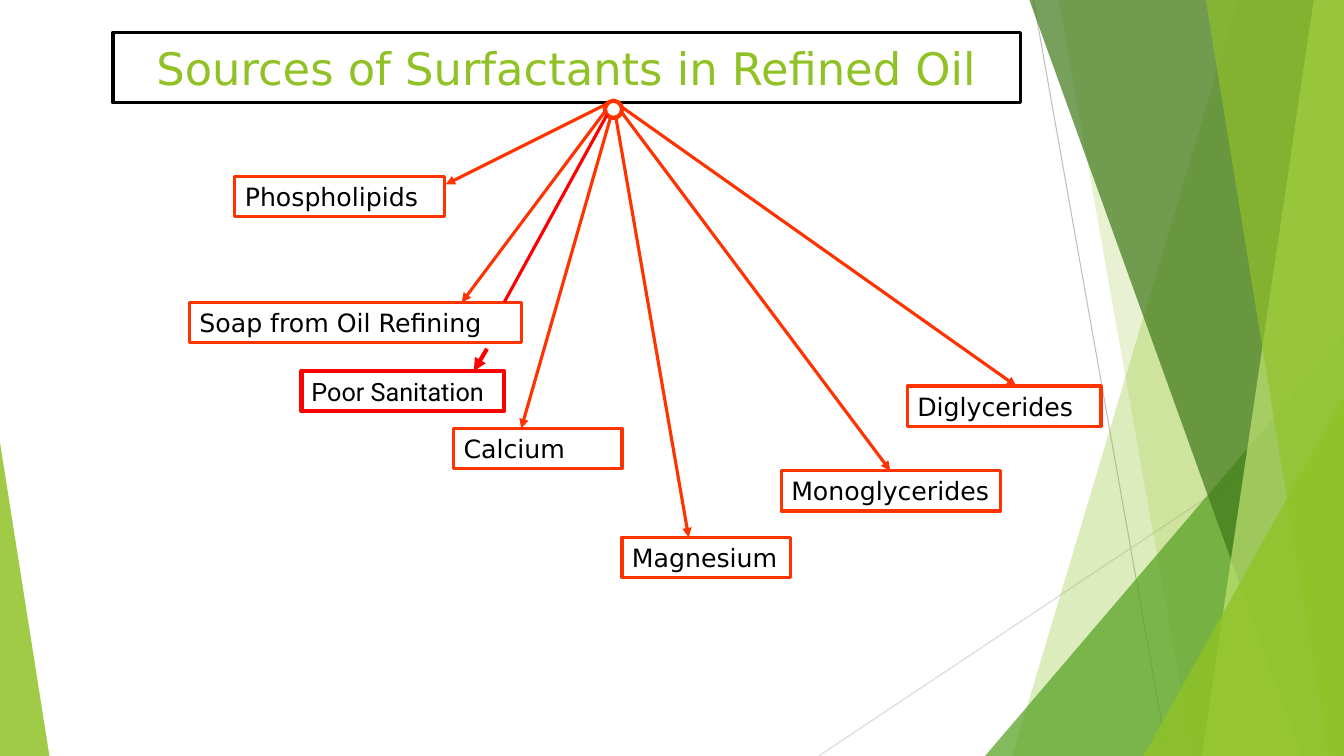
from dataclasses import dataclass

import pptx
import pptx.dml.color
import pptx.enum.dml
import pptx.enum.shapes
import pptx.enum.text
import pptx.oxml.ns
import pptx.util
from lxml import etree
from pptx.util import Inches

COLORS = {
    "black": "000000", "white": "FFFFFF", "orange": "FF3300", "red": "FF0000",
    "green": "90C226", "leaf": "54A021", "forest": "3F7819", "lime": "C0E474",
    "gray": "BFBFBF", "silver": "D9D9D9",
}
WIDTH, HEIGHT = 13.33, 7.5
BOX_HEIGHT = 0.4
Point = tuple[float, float]


@dataclass
class Facet:
    corners: list[Point]
    color: str
    opacity: int


@dataclass
class Source:
    label: str
    left: float
    top: float
    width: float
    color: str = "orange"
    font: str = "DejaVu Sans"
    line_width: float = 2.25


@dataclass
class Ray:
    start: Point
    end: Point
    color: str = "orange"
    width: float = 2.25
    arrow: bool = True


def right_band(top_x: float, bottom_x: float) -> list[Point]:
    """Corners of a full-height band reaching the right edge of the slide."""
    return [(top_x, 0), (WIDTH, 0), (WIDTH, HEIGHT), (bottom_x, HEIGHT)]


def bottom_wedge(edge_x: float, top: float, tip_x: float) -> list[Point]:
    """Corners of a right triangle standing on the bottom of the slide."""
    return [(edge_x, top), (edge_x, HEIGHT), (tip_x, HEIGHT)]


GUIDE_LINES = [
    Ray((10.25, 0), (11.58, HEIGHT), "gray", 0.75, False),
    Ray((WIDTH, 4.03), (8.12, HEIGHT), "silver", 0.75, False),
]
FACETS = [
    Facet(right_band(12.28, 10.04), "green", 30),
    Facet(right_band(10.5, 11.83), "green", 20),
    Facet(bottom_wedge(WIDTH, 3.33, 9.77), "leaf", 72),
    Facet(right_band(10.21, 12.91), "forest", 70),
    Facet(right_band(13.03, 11.92), "lime", 70),
    Facet(right_band(11.96, 13.18), "green", 65),
    Facet(bottom_wedge(WIDTH, 3.93, 11.34), "green", 80),
    Facet(bottom_wedge(0, 4.39, 0.49), "green", 85),
]
SOURCES = [
    Source("Phospholipids", 2.33, 1.75, 2.08),
    Source("Soap from Oil Refining", 1.88, 3, 3.29),
    Source("Calcium", 4.5, 4.25, 1.67),
    Source("Magnesium", 6.17, 5.33, 1.67),
    Source("Monoglycerides", 7.75, 4.67, 2.17),
    Source("Diglycerides", 9, 3.83, 1.92),
]
SANITATION = Source("Poor Sanitation", 2.99, 3.68, 2.01, "red", "Roboto", 3)
HUB = (6.08, 1)
RAYS = [
    Ray(HUB, (4.42, 1.83)),
    Ray(HUB, (4.58, 3)),
    Ray((6.08, 1.08), (5.17, 4.25)),
    Ray(HUB, (6.83, 5.33)),
    Ray(HUB, (8.83, 4.67)),
    Ray(HUB, (10.08, 3.83)),
]
SANITATION_RAYS = [
    Ray((6.02, 1.14), (5, 3), "red", arrow=False),
    Ray((4.83, 3.46), (4.7, 3.68), "red", 3),
]


def rgb(color: str) -> pptx.dml.color.RGBColor:
    return pptx.dml.color.RGBColor.from_string(COLORS[color])


def set_line(line, color: str, width: float) -> None:
    line.color.rgb = rgb(color)
    line.width = pptx.util.Pt(width)


def format_text(frame, size: float, font: str, color: str, alignment) -> None:
    paragraph = frame.paragraphs[0]
    paragraph.alignment = alignment
    for run in paragraph.runs:
        run.font.size = pptx.util.Pt(size)
        run.font.name = font
        run.font.color.rgb = rgb(color)


def draw_facet(slide, facet: Facet) -> None:
    points = [(Inches(x), Inches(y)) for x, y in facet.corners]
    builder = slide.shapes.build_freeform(*points[0])
    builder.add_line_segments(points[1:], close=True)
    shape = builder.convert_to_shape()
    shape.shadow.inherit = False
    shape.line.fill.background()
    shape.fill.solid()
    shape.fill.fore_color.rgb = rgb(facet.color)
    solid = shape.fill._xPr.find(pptx.oxml.ns.qn("a:solidFill"))
    etree.SubElement(solid[0], pptx.oxml.ns.qn("a:alpha"), val=str(facet.opacity * 1000))


def draw_ray(slide, ray: Ray) -> None:
    connector = slide.shapes.add_connector(
        pptx.enum.shapes.MSO_CONNECTOR.STRAIGHT,
        *(Inches(value) for value in ray.start + ray.end))
    set_line(connector.line, ray.color, ray.width)
    if ray.arrow:
        etree.SubElement(connector.line._get_or_add_ln(),
                         pptx.oxml.ns.qn("a:tailEnd"), type="triangle")
    etree.SubElement(connector._element.spPr, pptx.oxml.ns.qn("a:effectLst"))


def draw_source(slide, source: Source) -> None:
    box = slide.shapes.add_shape(
        pptx.enum.shapes.MSO_SHAPE.RECTANGLE, Inches(source.left),
        Inches(source.top), Inches(source.width), Inches(BOX_HEIGHT))
    box.shadow.inherit = False
    box.fill.background()
    set_line(box.line, source.color, source.line_width)
    frame = box.text_frame
    frame.text = source.label
    frame.word_wrap = True
    frame.auto_size = pptx.enum.text.MSO_AUTO_SIZE.SHAPE_TO_FIT_TEXT
    frame.vertical_anchor = pptx.enum.text.MSO_ANCHOR.TOP
    format_text(frame, 18, source.font, "black", pptx.enum.text.PP_ALIGN.LEFT)


def draw_title(slide) -> None:
    title = slide.shapes.title
    title.left, title.top = Inches(1.12), Inches(0.32)
    title.width, title.height = Inches(9), Inches(0.7)
    set_line(title.line, "black", 2.25)
    frame = title.text_frame
    frame.text = "Sources of Surfactants in Refined Oil"
    frame.auto_size = pptx.enum.text.MSO_AUTO_SIZE.NONE
    frame.vertical_anchor = pptx.enum.text.MSO_ANCHOR.MIDDLE
    format_text(frame, 32, "DejaVu Sans", "green", pptx.enum.text.PP_ALIGN.CENTER)


def draw_hub(slide) -> None:
    hub = slide.shapes.add_shape(pptx.enum.shapes.MSO_SHAPE.OVAL,
                                 Inches(6), Inches(1), Inches(0.17), Inches(0.17))
    hub.shadow.inherit = False
    hub.fill.solid()
    hub.fill.fore_color.rgb = rgb("white")
    set_line(hub.line, "orange", 3)


def main() -> None:
    deck = pptx.Presentation()
    deck.slide_width, deck.slide_height = Inches(WIDTH), Inches(HEIGHT)
    slide = deck.slides.add_slide(deck.slide_layouts.get_by_name("Title Only"))
    for guide in GUIDE_LINES:
        draw_ray(slide, guide)
    for facet in FACETS:
        draw_facet(slide, facet)
    draw_title(slide)
    for source in SOURCES:
        draw_source(slide, source)
    for ray in RAYS:
        draw_ray(slide, ray)
    draw_hub(slide)
    draw_source(slide, SANITATION)
    for ray in SANITATION_RAYS:
        draw_ray(slide, ray)
    deck.save("out.pptx")


if __name__ == "__main__":
    main()
